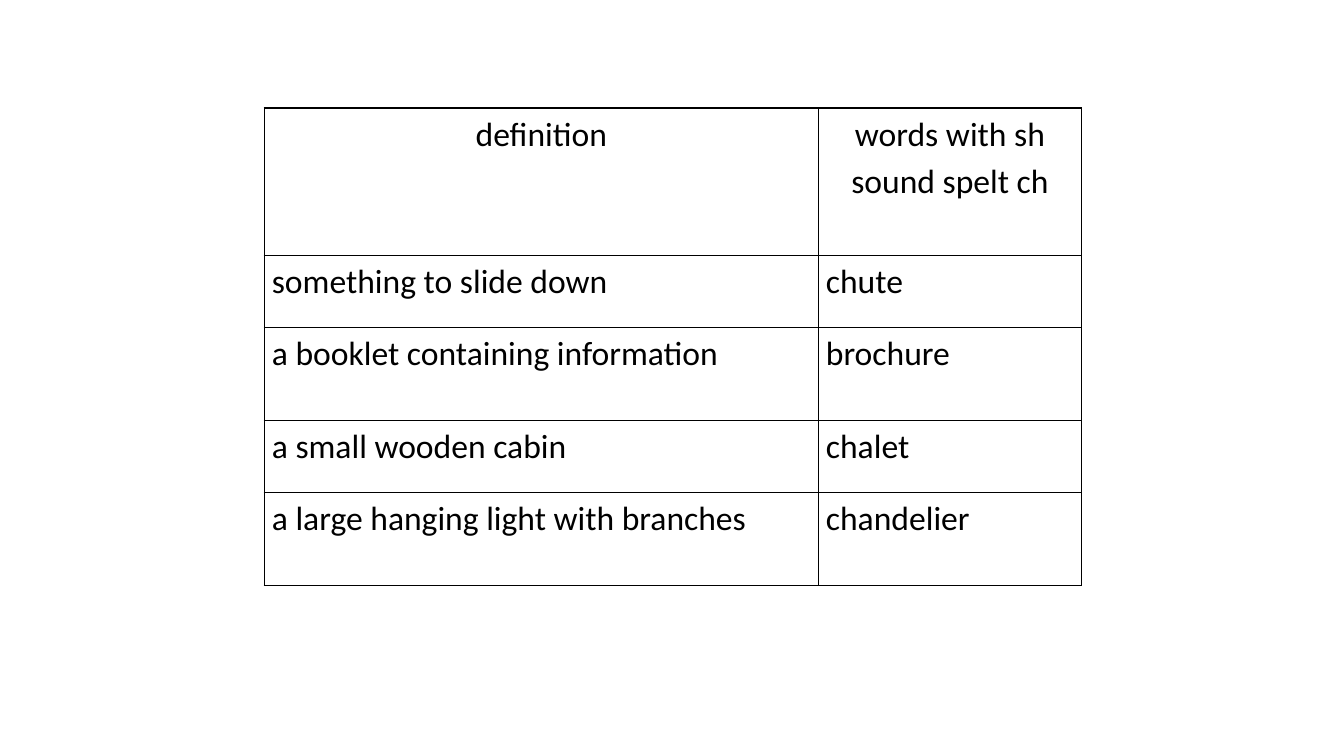
from dataclasses import dataclass

from lxml.etree import SubElement
from pptx import Presentation
from pptx.dml.color import RGBColor
from pptx.enum.text import PP_ALIGN
from pptx.oxml.ns import qn
from pptx.slide import Slide
from pptx.table import _Cell
from pptx.util import Pt

COLORS = {"background": "FFFFFF", "text": "000000", "border": "000000"}
FONT_NAME = "Calibri"
FONT_SIZE = 24
BORDER_WIDTH = 1
SIDE_MARGIN = 5.4
TABLE_LEFT, TABLE_TOP = 188.8, 77.2
COLUMN_WIDTHS = (395.8, 188)


@dataclass(frozen=True)
class WordRow:
    definition: str
    word: str
    height: float
    alignment: PP_ALIGN = PP_ALIGN.LEFT


WORD_ROWS = (
    WordRow("definition", "words with sh sound spelt ch", 105.6, PP_ALIGN.CENTER),
    WordRow("something to slide down", "chute", 51.4),
    WordRow("a booklet containing information", "brochure", 66.2),
    WordRow("a small wooden cabin", "chalet", 51.4),
    WordRow("a large hanging light with branches", "chandelier", 66.2),
)


def add_borders(cell: _Cell) -> None:
    properties = cell._tc.get_or_add_tcPr()
    for position, side in enumerate(("lnL", "lnR", "lnT", "lnB")):
        line = SubElement(properties, qn(f"a:{side}"), w=str(Pt(BORDER_WIDTH)))
        fill = SubElement(line, qn("a:solidFill"))
        SubElement(fill, qn("a:srgbClr"), val=COLORS["border"])
        properties.insert(position, line)


def format_cell(cell: _Cell, text: str, alignment: PP_ALIGN) -> None:
    cell.margin_left = cell.margin_right = Pt(SIDE_MARGIN)
    cell.margin_top = cell.margin_bottom = Pt(0)
    cell.fill.background()
    add_borders(cell)
    cell.text = text
    paragraph = cell.text_frame.paragraphs[0]
    paragraph.alignment = alignment
    paragraph.line_spacing = 1.15
    paragraph.font.name = FONT_NAME
    paragraph.font.size = Pt(FONT_SIZE)
    paragraph.font.bold = False
    paragraph.font.color.rgb = RGBColor.from_string(COLORS["text"])


def add_word_table(slide: Slide) -> None:
    table = slide.shapes.add_table(
        len(WORD_ROWS), len(COLUMN_WIDTHS), Pt(TABLE_LEFT), Pt(TABLE_TOP),
        Pt(sum(COLUMN_WIDTHS)), Pt(sum(row.height for row in WORD_ROWS)),
    ).table
    table.first_row = False
    table.horz_banding = False
    for column, width in zip(table.columns, COLUMN_WIDTHS):
        column.width = Pt(width)
    for table_row, word_row in zip(table.rows, WORD_ROWS):
        table_row.height = Pt(word_row.height)
        for cell, text in zip(table_row.cells, (word_row.definition, word_row.word)):
            format_cell(cell, text, word_row.alignment)


def main() -> None:
    presentation = Presentation()
    presentation.slide_width, presentation.slide_height = Pt(960), Pt(540)
    slide = presentation.slides.add_slide(presentation.slide_layouts[6])
    slide.background.fill.solid()
    slide.background.fill.fore_color.rgb = RGBColor.from_string(COLORS["background"])
    add_word_table(slide)
    presentation.save("out.pptx")


if __name__ == "__main__":
    main()
